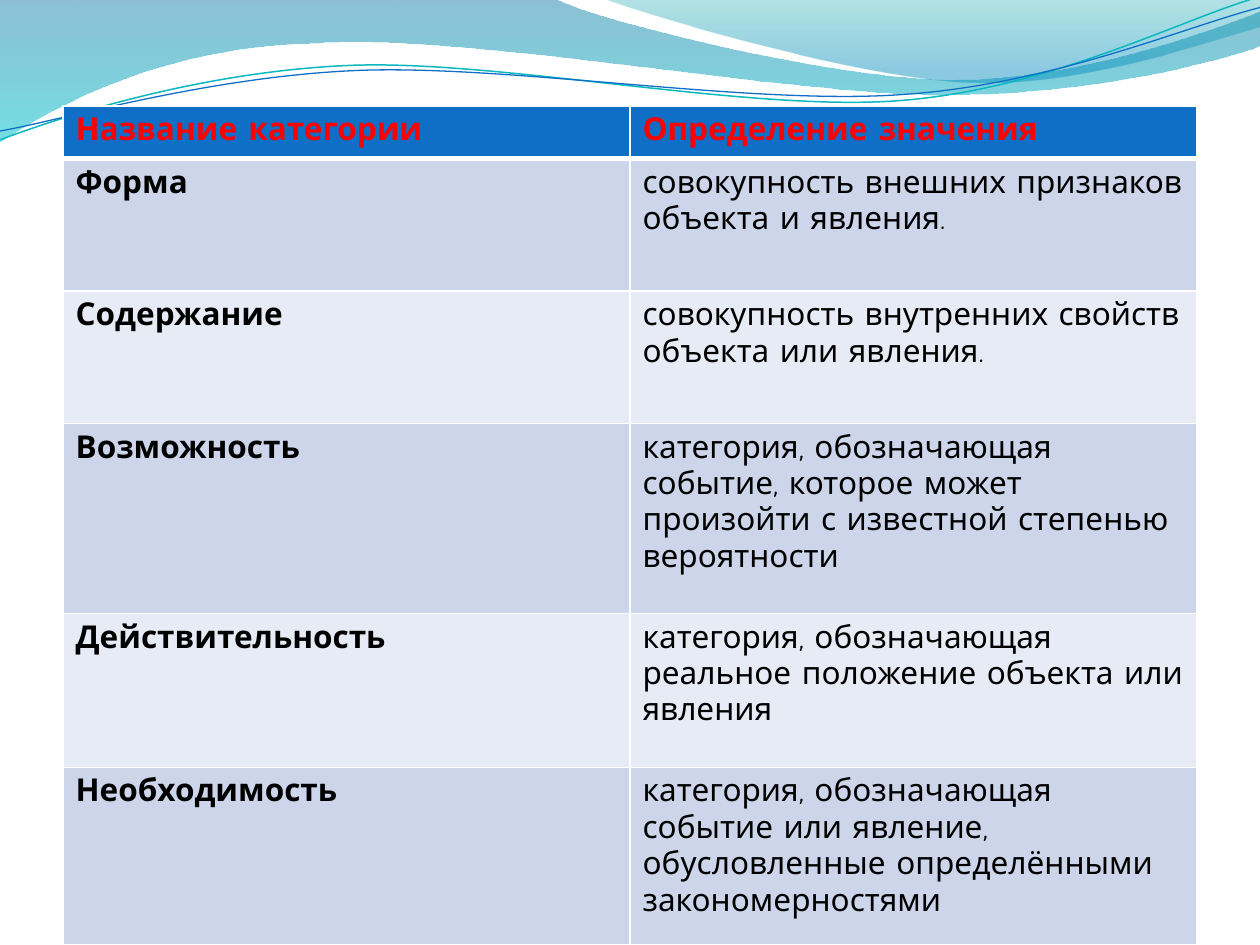
from dataclasses import dataclass
from typing import Optional

from lxml.etree import SubElement
from pptx import Presentation
from pptx.dml.color import RGBColor
from pptx.oxml.ns import qn
from pptx.util import Inches, Pt

WHITE = RGBColor(0xFF, 0xFF, 0xFF)
BLACK = RGBColor(0, 0, 0)
RED = RGBColor(0xFF, 0, 0)
BLUE = RGBColor(0x0F, 0x6F, 0xC6)
TEAL = RGBColor(0x0A, 0xB8, 0xBF)
BANDS = (RGBColor(0xCC, 0xD5, 0xEA), RGBColor(0xE7, 0xEB, 0xF5))
FONT = "Comic Neue"


@dataclass
class Stop:
    position: float
    color: RGBColor
    opacity: int  # percent


@dataclass
class Wave:
    """Start point, then segments of 2 numbers (line) or 6 (Bezier curve)."""
    start: tuple
    segments: list
    stops: Optional[list] = None
    line: Optional[RGBColor] = None
    width: float = 0


@dataclass
class Category:
    name: str
    meaning: str
    height: float


WAVES = [
    Wave((0, 0), [
        (4.4, -0.01), (4.76, 0.17, 6.64, 0.63, 7.58, 0.63),
        (8.53, 0.63, 9.58, 0.26, 10, 0.09), (10.01, 0.36),
        (9.83, 0.44, 8.7, 0.76, 7.46, 0.75), (6.22, 0.75, 3.82, 0.28, 2.57, 0.34),
        (1.29, 0.36, 0.46, 0.83, -0.01, 1.13)],
        stops=[Stop(0, RGBColor(0x00, 0x74, 0xA1), 45),
               Stop(1, RGBColor(0x00, 0xC6, 0xCF), 55)]),
    Wave((4.79, -0.01), [
        (5.09, 0.11, 6.82, 0.62, 7.69, 0.65), (8.56, 0.69, 9.61, 0.32, 10, 0.21),
        (10, 0)],
        stops=[Stop(0, RGBColor(0x00, 0xA1, 0xA9), 30),
               Stop(0.8, RGBColor(0x00, 0x8B, 0xBF), 45)]),
    Wave((0, 1.11), [
        (0.48, 0.93, 1.58, 0.57, 2.77, 0.52), (3.95, 0.47, 5.93, 0.89, 7.13, 0.8),
        (8.33, 0.71, 9.38, 0.15, 9.98, -0.02)], line=TEAL, width=0.85),
    Wave((0, 1.04), [
        (0.47, 0.96, 1.64, 0.61, 2.83, 0.56), (4.03, 0.51, 5.97, 0.84, 7.17, 0.75),
        (8.36, 0.67, 9.41, 0.21, 10, 0.06)], line=BLUE, width=0.75),
]

ROWS = [
    Category("Название категории", "Определение значения", 0.42),
    Category("Форма", "совокупность внешних признаков объекта и явления.", 1.05),
    Category("Содержание", "совокупность внутренних свойств объекта или явления.", 1.05),
    Category("Возможность", "категория, обозначающая событие, которое может произойти "
             "с известной степенью вероятности", 1.51),
    Category("Действительность", "категория, обозначающая реальное положение объекта "
             "или явления", 1.22),
    Category("Необходимость", "категория, обозначающая событие или явление, "
             "обусловленные определёнными закономерностями", 1.41),
]


def build_outline(page, wave: Wave):
    """Lay out every point as a line, then turn each curve's three into a Bezier."""
    points = [(Inches(x), Inches(y)) for segment in wave.segments
              for x, y in zip(segment[::2], segment[1::2])]
    x, y = wave.start
    builder = page.shapes.build_freeform(Inches(x), Inches(y))
    builder.add_line_segments(points, close=wave.stops is not None)
    shape = builder.convert_to_shape()
    lines = iter(list(shape._element.spPr.iter(qn("a:lnTo"))))
    for segment in wave.segments:
        group = [next(lines) for _ in range(len(segment) // 2)]
        if len(group) == 3:
            outline = group[0].getparent()
            curve = SubElement(outline, qn("a:cubicBezTo"))
            outline.insert(outline.index(group[0]), curve)
            for line in group:
                curve.append(line[0])
                outline.remove(line)
    return shape


def draw_wave(page, wave: Wave) -> None:
    shape = build_outline(page, wave)
    shape.shadow.inherit = False
    if wave.stops is None:
        shape.fill.background()
        shape.line.color.rgb = wave.line
        shape.line.width = Pt(wave.width)
        return
    shape.line.fill.background()
    shape.fill.gradient()
    shape.fill.gradient_angle = 270
    for target, stop in zip(shape.fill.gradient_stops, wave.stops):
        target.position = stop.position
        target.color.rgb = stop.color
    colors = shape._element.spPr.iter(qn("a:srgbClr"))
    for color, stop in zip(colors, wave.stops):
        SubElement(color, qn("a:alpha"), val=str(stop.opacity * 1000))


def set_borders(cell, top: float, bottom: float) -> None:
    properties = cell._tc.get_or_add_tcPr()
    for side, width in (("L", 1), ("R", 1), ("T", top), ("B", bottom)):
        line = SubElement(properties, qn(f"a:ln{side}"), w=str(Pt(width)))
        SubElement(SubElement(line, qn("a:solidFill")), qn("a:srgbClr"), val=str(WHITE))


def draw_table(page, rows: list) -> None:
    height = sum(row.height for row in rows)
    table = page.shapes.add_table(len(rows), 2, Inches(0.5), Inches(0.84),
                                  Inches(9), Inches(height)).table
    for index, row in enumerate(rows):
        table.rows[index].height = Inches(row.height)
        header = index == 0
        for column, text in enumerate((row.name, row.meaning)):
            cell = table.cell(index, column)
            set_borders(cell, top=3 if index == 1 else 1, bottom=3 if header else 1)
            cell.fill.solid()
            cell.fill.fore_color.rgb = BLUE if header else BANDS[(index - 1) % 2]
            cell.text = text
            font = cell.text_frame.paragraphs[0].font
            font.name, font.size = FONT, Pt(18)
            font.bold = header or column == 0
            font.color.rgb = RED if header else BLACK


def main() -> None:
    deck = Presentation()
    deck.slide_width, deck.slide_height = Inches(10), Inches(7.5)
    page = deck.slides.add_slide(deck.slide_layouts[6])

    # Waves along the top
    for wave in WAVES:
        draw_wave(page, wave)

    # Categories and their meanings
    draw_table(page, ROWS)
    deck.save("out.pptx")


if __name__ == "__main__":
    main()
